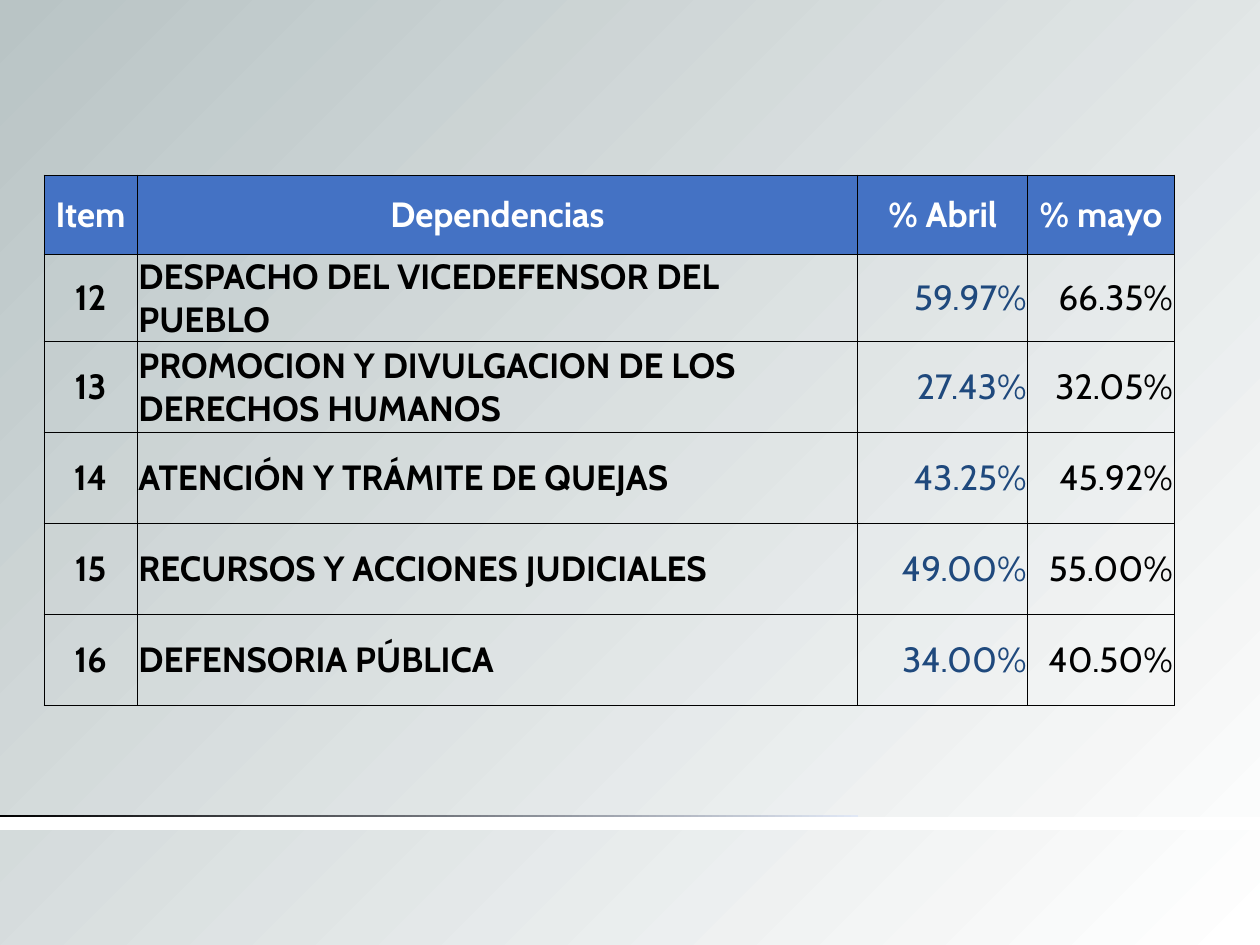
from lxml import etree
from pptx import Presentation
from pptx.dml.color import RGBColor
from pptx.enum.shapes import MSO_SHAPE
from pptx.enum.text import MSO_ANCHOR, PP_ALIGN
from pptx.oxml.ns import qn
from pptx.util import Pt

RECTANGLE = MSO_SHAPE.RECTANGLE
MIDDLE = MSO_ANCHOR.MIDDLE
LEFT, CENTER, RIGHT = PP_ALIGN.LEFT, PP_ALIGN.CENTER, PP_ALIGN.RIGHT

# Content
HEADERS = ["Item", "Dependencias", "% Abril", "% mayo"]
ROWS = [
    ("12", "DESPACHO DEL VICEDEFENSOR DEL PUEBLO", "59.97%", "66.35%"),
    ("13", "PROMOCION Y DIVULGACION DE LOS DERECHOS HUMANOS", "27.43%", "32.05%"),
    ("14", "ATENCIÓN Y TRÁMITE DE QUEJAS", "43.25%", "45.92%"),
    ("15", "RECURSOS Y ACCIONES JUDICIALES", "49.00%", "55.00%"),
    ("16", "DEFENSORIA PÚBLICA", "34.00%", "40.50%"),
]

# Style
COLORS = {
    "white": "FFFFFF", "black": "000000", "mist": "B9C4C5",
    "pale": "E1E8F5", "header": "4472C4", "april": "1F497D",
}
FONT = "Cabin"
COLUMN_WIDTHS = [53.2, 411.8, 97.2, 83.6]
ROW_HEIGHTS = [45.4, 39.6] + [52] * 4
# Alignment, bold and colour of each body column
COLUMN_STYLES = [
    (CENTER, True, "black"),
    (LEFT, True, "black"),
    (RIGHT, False, "april"),
    (RIGHT, False, "black"),
]


def rgb(name):
    return RGBColor.from_string(COLORS[name])


def set_gradient(fill, first, last):
    fill.gradient()
    for stop, position, name in zip(fill.gradient_stops, (0, 1), (first, last)):
        stop.position = position
        stop.color.rgb = rgb(name)


def add_bar(slide, left, top, width, height):
    bar = slide.shapes.add_shape(RECTANGLE, Pt(left), Pt(top), Pt(width), Pt(height))
    bar.shadow.inherit = False
    bar.line.fill.background()
    return bar


def add_borders(cell):
    properties = cell._tc.get_or_add_tcPr()
    for index, side in enumerate(("lnL", "lnR", "lnT", "lnB")):
        line = etree.Element(qn(f"a:{side}"), w=str(Pt(0.5)))
        solid = etree.SubElement(line, qn("a:solidFill"))
        etree.SubElement(solid, qn("a:srgbClr"), val=COLORS["black"])
        properties.insert(index, line)


def fill_cell(cell, text, alignment, bold, color):
    cell.text = text
    cell.vertical_anchor = MIDDLE
    cell.margin_left = cell.margin_right = cell.margin_top = Pt(0.75)
    cell.margin_bottom = 0
    paragraph = cell.text_frame.paragraphs[0]
    paragraph.alignment = alignment
    font = paragraph.font
    font.name, font.size, font.bold = FONT, Pt(20), bold
    font.color.rgb = rgb(color)
    add_borders(cell)


presentation = Presentation()
presentation.slide_width, presentation.slide_height = Pt(720), Pt(540)
slide = presentation.slides.add_slide(presentation.slide_layouts[6])

# Background: circular gradient, white at the bottom right
set_gradient(slide.background.fill, "white", "mist")
gradient = slide.element.find(".//" + qn("a:gradFill"))
gradient.remove(gradient.find(qn("a:lin")))
circle = etree.SubElement(gradient, qn("a:path"))
circle.set("path", "circle")
etree.SubElement(circle, qn("a:fillToRect"), l="100000", t="100000")

# Footer rule: dark gradient edge above a white band
edge = add_bar(slide, 0, 466, 490.5, 3.6)
set_gradient(edge.fill, "black", "pale")
edge.fill.gradient_angle = 0
band = add_bar(slide, 0, 467, 720, 7.2)
band.fill.solid()
band.fill.fore_color.rgb = rgb("white")

# Table
table = slide.shapes.add_table(
    len(ROWS) + 1, len(HEADERS), Pt(25.2), Pt(100),
    Pt(sum(COLUMN_WIDTHS)), Pt(sum(ROW_HEIGHTS)),
).table
table.first_row = table.horz_banding = False
for column, width in zip(table.columns, COLUMN_WIDTHS):
    column.width = Pt(width)
for row, height in zip(table.rows, ROW_HEIGHTS):
    row.height = Pt(height)

for column_index, header in enumerate(HEADERS):
    cell = table.cell(0, column_index)
    cell.fill.solid()
    cell.fill.fore_color.rgb = rgb("header")
    fill_cell(cell, header, CENTER, True, "white")

for row_index, values in enumerate(ROWS, start=1):
    for column_index, (value, style) in enumerate(zip(values, COLUMN_STYLES)):
        cell = table.cell(row_index, column_index)
        cell.fill.background()
        fill_cell(cell, value, *style)

presentation.save("out.pptx")
